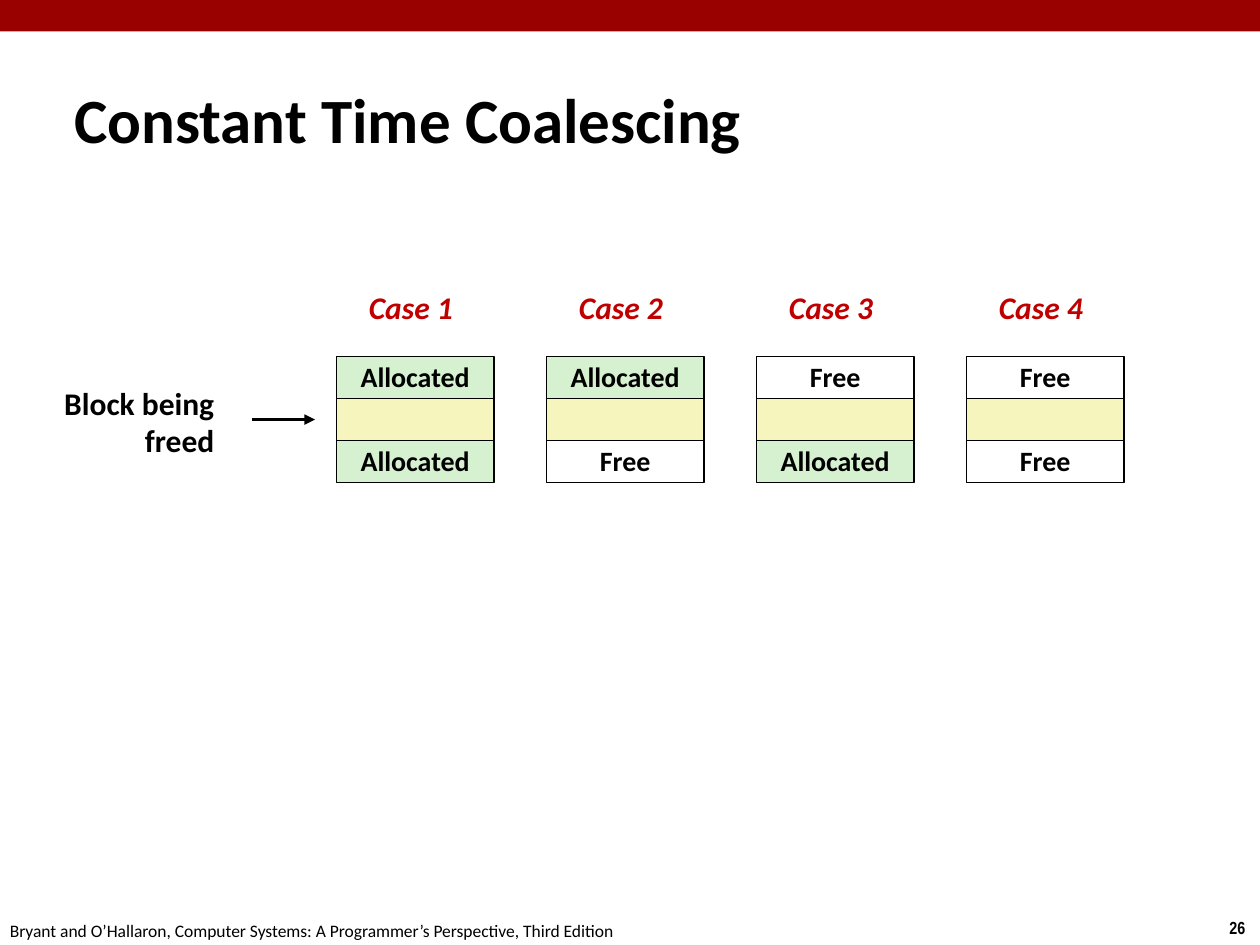
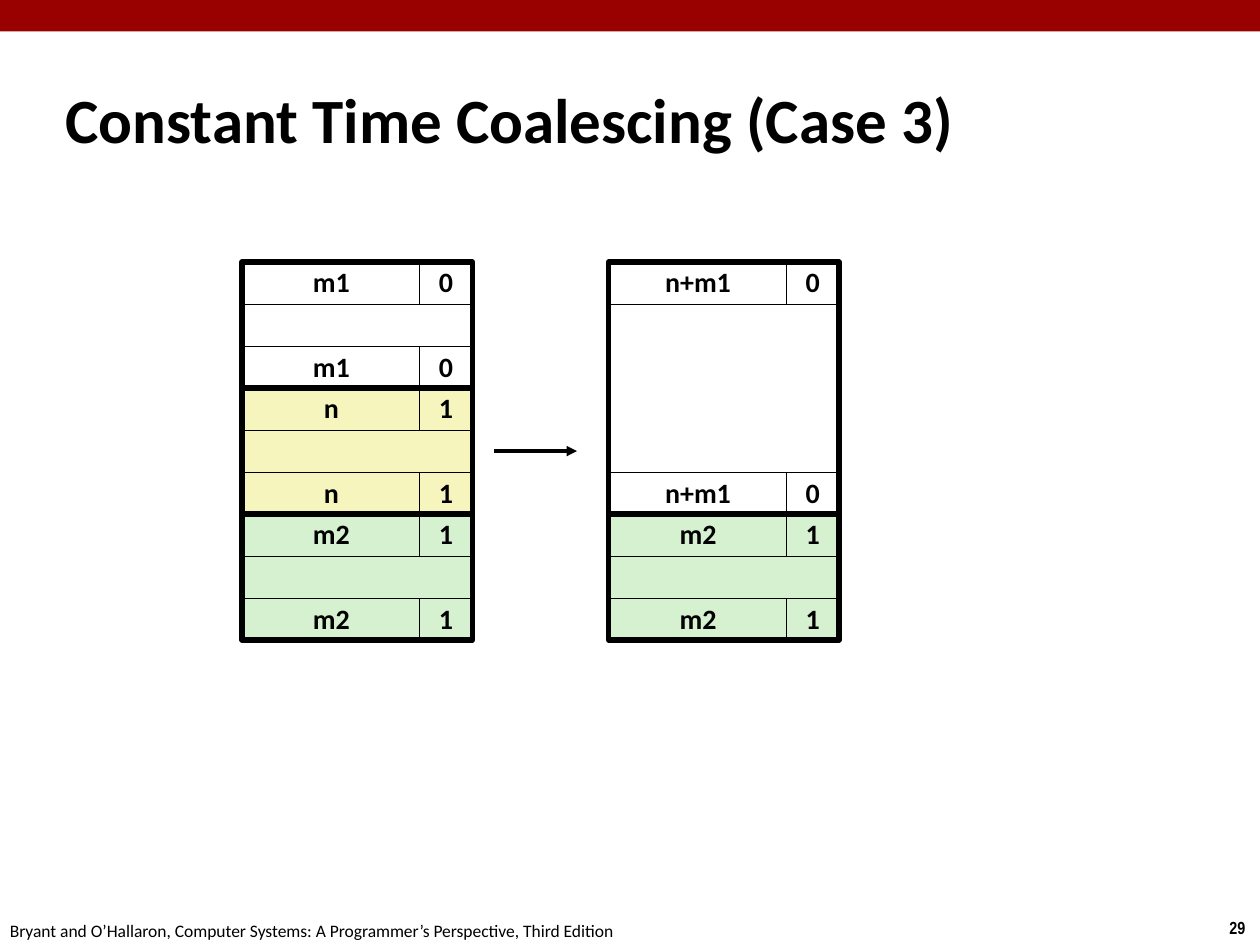
from lxml import etree
from pptx import Presentation
from pptx import util as u
from pptx.dml.color import RGBColor
from pptx.enum import shapes, text
from pptx.oxml import ns

COLORS = {
    "band": "990000",
    "case": "C00000",
    "ink": "000000",
    "free": "FFFFFF",
    "freed": "F6F5BD",
    "allocated": "D5F1CF",
}
FOOTER = "Bryant and O’Hallaron, Computer Systems: A Programmer’s Perspective, Third Edition"
ROW = 1 / 3
SIZE_W, FLAG_W = 1.42, 0.42
BLOCK_W = 1.83


def color(name):
    return RGBColor.from_string(COLORS[name])


class Deck:
    font = "Calibri"

    def __init__(self):
        self.prs = Presentation()
        self.prs.slide_width = u.Inches(10)
        self.prs.slide_height = u.Inches(7.5)
        self.s = None

    def set_text(self, tf, content, size, align=None, ink="ink", bold=True,
                 italic=False, font=None, spacing=None):
        tf.text = content
        for p in tf.paragraphs:
            p.alignment = align
            p.line_spacing = spacing
            p.font.name = font or self.font
            p.font.size = u.Pt(size)
            p.font.bold = bold
            p.font.italic = italic
            p.font.color.rgb = color(ink)

    def slide(self, title, number, x, w):
        self.s = self.prs.slides.add_slide(self.prs.slide_layouts[5])
        self.rect(0, 0, 10, 0.25, "band")
        self.label(str(number), 9.66, 7.23, 0.34, 0.27, 10, font="Arial Narrow")
        self.label(FOOTER, -0.02, 7.25, 5.08, 0.27, 10, bold=False)
        sp = self.s.shapes.title
        sp.left, sp.top = u.Inches(x), u.Inches(0.62)
        sp.width, sp.height = u.Inches(w), u.Inches(0.63)
        tf = sp.text_frame
        tf.auto_size = text.MSO_AUTO_SIZE.NONE
        tf.vertical_anchor = text.MSO_ANCHOR.MIDDLE
        self.set_text(tf, title, 36, text.PP_ALIGN.LEFT)

    def label(self, content, x, y, w, h, size, **style):
        sp = self.s.shapes.add_textbox(*map(u.Inches, (x, y, w, h)))
        sp.text_frame.word_wrap = False
        sp.text_frame.auto_size = text.MSO_AUTO_SIZE.SHAPE_TO_FIT_TEXT
        self.set_text(sp.text_frame, content, size, **style)

    def rect(self, x, y, w, h, fill=None, line=None, content=""):
        sp = self.s.shapes.add_shape(shapes.MSO_SHAPE.RECTANGLE,
                                     *map(u.Inches, (x, y, w, h)))
        sp.shadow.inherit = False
        if fill:
            sp.fill.solid()
            sp.fill.fore_color.rgb = color(fill)
        else:
            sp.fill.background()
        if line:
            sp.line.color.rgb = color("ink")
            sp.line.width = u.Pt(line)
        else:
            sp.line.fill.background()
        if content:
            tf = sp.text_frame
            tf.word_wrap = False
            tf.vertical_anchor = text.MSO_ANCHOR.MIDDLE
            self.set_text(tf, content, 16, text.PP_ALIGN.CENTER, spacing=0.98)

    def arrow(self, x1, x2, y):
        sp = self.s.shapes.add_connector(shapes.MSO_CONNECTOR.STRAIGHT,
                                         *map(u.Inches, (x1, y, x2, y)))
        sp.line.color.rgb = color("ink")
        sp.line.width = u.Pt(2)
        sp_pr = sp.element.spPr
        ln = sp_pr.find(ns.qn("a:ln"))
        etree.SubElement(ln, ns.qn("a:tailEnd"), type="triangle")
        etree.SubElement(sp_pr, ns.qn("a:effectLst"))

    def block(self, x, y, size, flag, fill, rows=3):
        last = y + (rows - 1) * ROW
        self.rect(x, y + ROW, BLOCK_W, (rows - 2) * ROW, fill, 0.25)
        for tag_y in (y, last):
            self.rect(x, tag_y, SIZE_W, ROW, fill, 0.25, size)
            self.rect(x + BLOCK_W - FLAG_W, tag_y, FLAG_W, ROW, fill, 0.25, flag)
        self.rect(x, y, BLOCK_W, rows * ROW, line=3)


def cases_slide(deck):
    deck.slide("Constant Time Coalescing", 26, 0.49, 7.68)
    cases = [("Allocated", "Allocated"), ("Allocated", "Free"),
             ("Free", "Allocated"), ("Free", "Free")]
    for i, (before, after) in enumerate(cases):
        x = 2.67 + i * 5 / 3
        for row, state in enumerate((before, "", after)):
            fill = state.lower() or "freed"
            deck.rect(x, 2.83 + row * ROW, 1.25, ROW, fill, 1, state)
        deck.label(f"Case {i + 1}", x + 0.16, 2.25, 0.87, 0.4, 18,
                   ink="case", italic=True, spacing=0.98)
    deck.label("Block being\nfreed", 0.4, 3.01, 1.4, 0.7, 18,
               align=text.PP_ALIGN.RIGHT, spacing=0.98)
    deck.arrow(2, 2.5, 3.33)


def case_3_slide(deck):
    deck.slide("Constant Time Coalescing (Case 3)", 29, 0.42, 9.17)
    before = [("m1", "0", "free", 3), ("n", "1", "freed", 3),
              ("m2", "1", "allocated", 3)]
    after = [("n+m1", "0", "free", 6), ("m2", "1", "allocated", 3)]
    for x, blocks in ((1.92, before), (4.83, after)):
        y = 2.08
        for size, flag, fill, rows in blocks:
            deck.block(x, y, size, flag, fill, rows)
            y += rows * ROW
    deck.arrow(3.92, 4.58, 3.58)


def main():
    deck = Deck()
    cases_slide(deck)
    case_3_slide(deck)
    deck.prs.save("out.pptx")


if __name__ == "__main__":
    main()
